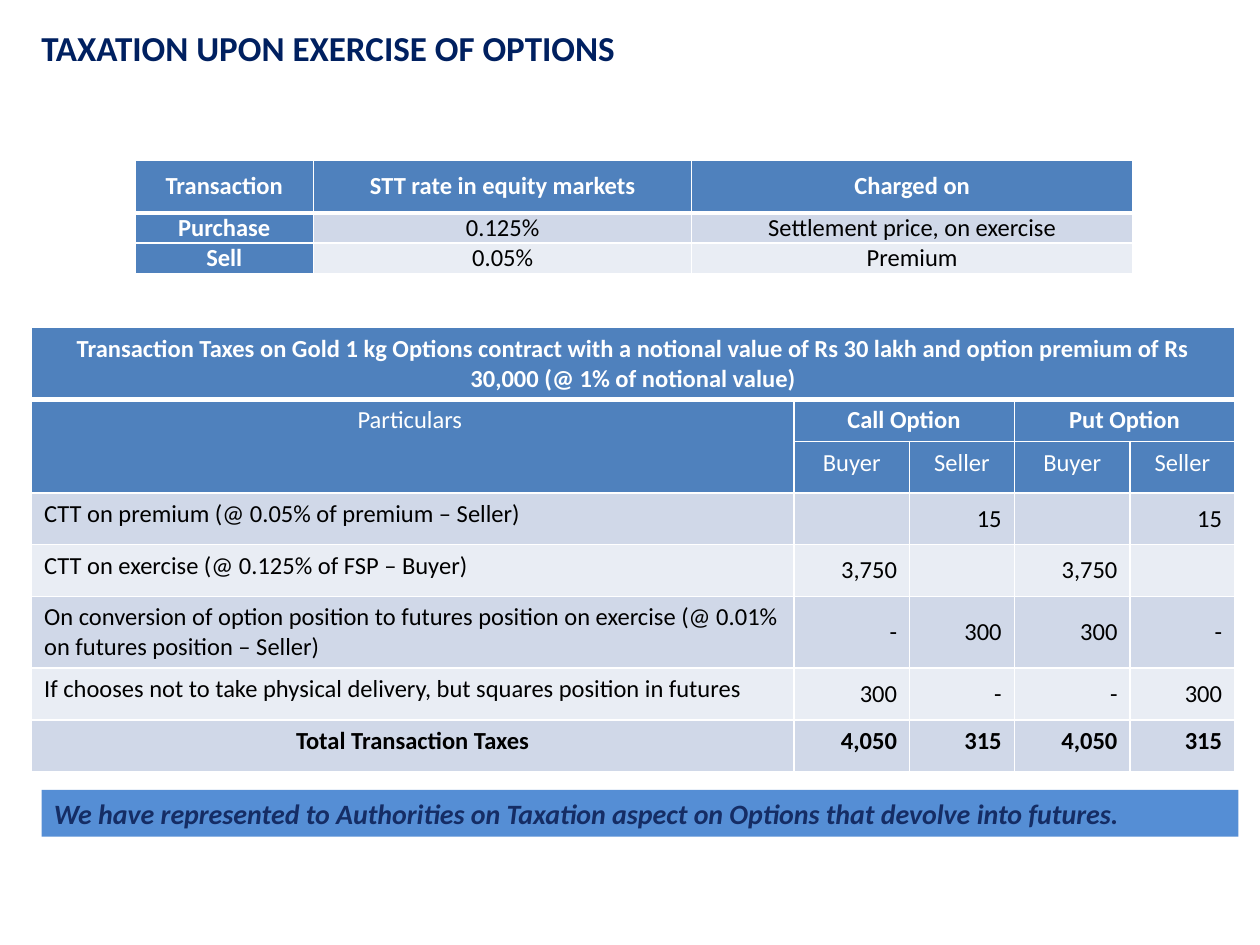
from dataclasses import dataclass
from typing import Optional

from lxml import etree
from pptx import Presentation
from pptx.dml.color import RGBColor
from pptx.enum import shapes, text
from pptx.oxml import ns
from pptx.util import Inches, Pt


@dataclass(frozen=True)
class Theme:
    font: str = "Calibri"
    title: str = "002060"
    header: str = "4F81BD"
    band_dark: str = "D0D8E8"
    band_light: str = "E9EDF4"
    bar: str = "558ED5"
    bar_text: str = "152D65"
    white: str = "FFFFFF"
    black: str = "000000"
    title_size: int = 20
    bar_size: int = 16
    table_size: int = 14
    rule: int = 1
    thick_rule: int = 3


THEME = Theme()
LEFT, CENTER, RIGHT = text.PP_ALIGN.LEFT, text.PP_ALIGN.CENTER, text.PP_ALIGN.RIGHT
TOP, MIDDLE = text.MSO_ANCHOR.TOP, text.MSO_ANCHOR.MIDDLE


@dataclass(frozen=True)
class Style:
    color: str
    fill: Optional[str] = None
    bold: bool = False
    italic: bool = False
    align: text.PP_ALIGN = CENTER
    anchor: text.MSO_ANCHOR = TOP
    size: int = THEME.table_size


@dataclass(frozen=True)
class Grid:
    left: float
    top: float
    columns: list[float]
    rows: list[float]
    values: list[list[str]]
    merges: tuple = ()
    tight: bool = False


def write(frame, content: str, style: Style) -> None:
    frame.text = content
    para = frame.paragraphs[0]
    para.alignment = style.align
    for span in para.runs:
        font = span.font
        font.name, font.size = THEME.font, Pt(style.size)
        font.bold, font.italic = style.bold, style.italic
        font.color.rgb = RGBColor.from_string(style.color)


def add_borders(cell, row: int) -> None:
    """Draw white rules, with a thick one under the first row."""
    properties = cell._tc.get_or_add_tcPr()
    for edge in "LRTB":
        thick = (row, edge) in ((0, "B"), (1, "T"))
        width = THEME.thick_rule if thick else THEME.rule
        line = etree.SubElement(properties, ns.qn(f"a:ln{edge}"), w=str(Pt(width)))
        fill = etree.SubElement(line, ns.qn("a:solidFill"))
        etree.SubElement(fill, ns.qn("a:srgbClr"), val=THEME.white)


def add_grid(page, grid: Grid, style_for) -> None:
    table = page.shapes.add_table(
        len(grid.rows), len(grid.columns), Inches(grid.left), Inches(grid.top),
        Inches(sum(grid.columns)), Inches(sum(grid.rows))).table
    for column, width in zip(table.columns, grid.columns):
        column.width = Inches(width)
    for row, height in zip(table.rows, grid.rows):
        row.height = Inches(height)
    for r, values in enumerate(grid.values):
        for c, value in enumerate(values):
            cell, style = table.cell(r, c), style_for(r, c)
            add_borders(cell, r)
            cell.fill.solid()
            cell.fill.fore_color.rgb = RGBColor.from_string(style.fill)
            cell.vertical_anchor = style.anchor
            if grid.tight:
                cell.margin_left = cell.margin_right = Inches(0.07)
                cell.margin_top = cell.margin_bottom = 0
            write(cell.text_frame, value, style)
    for first, last in grid.merges:
        table.cell(*first).merge(table.cell(*last))


def rate_style(row: int, column: int) -> Style:
    if row == 0 or column == 0:
        return Style(THEME.white, THEME.header, bold=True, anchor=MIDDLE)
    band = THEME.band_dark if row % 2 else THEME.band_light
    return Style(THEME.black, band, anchor=MIDDLE)


def tax_style(row: int, column: int) -> Style:
    if row < 3:
        bold = row == 0 or (row == 1 and column > 0)
        return Style(THEME.white, THEME.header, bold=bold)
    total = row == 7
    band = THEME.band_dark if row % 2 else THEME.band_light
    if column == 0:
        return Style(THEME.black, band, bold=total, align=CENTER if total else LEFT)
    return Style(THEME.black, band, bold=total, align=RIGHT,
                 anchor=TOP if total else MIDDLE)


RATES = Grid(1.07, 1.27, [1.42, 3, 3.5], [0.42, 0.24, 0.24], [
    ["Transaction", "STT rate in equity markets", "Charged on"],
    ["Purchase", "0.125%", "Settlement price, on exercise"],
    ["Sell", "0.05%", "Premium"],
], tight=True)

TAXES = Grid(0.25, 2.6, [6.05] + [0.92, 0.83] * 2,
             [0.57, 0.33, 0.41, 0.41, 0.41, 0.57, 0.41, 0.41], [
    ["Transaction Taxes on Gold 1 kg Options contract with a notional value of "
     "Rs 30 lakh and option premium of Rs 30,000 (@ 1% of notional value)"] + [""] * 4,
    ["Particulars ", "Call Option", "", "Put Option", ""],
    ["", "Buyer", "Seller", "Buyer", "Seller"],
    ["CTT on premium (@ 0.05% of premium – Seller)", "", "15", "", "15"],
    ["CTT on exercise (@ 0.125% of FSP – Buyer)", "3,750", "", "3,750", ""],
    ["On conversion of option position to futures position on exercise "
     "(@ 0.01% on futures position – Seller)", "-", "300", "300", "-"],
    ["If chooses not to take physical delivery, but squares position in futures",
     "300", "-", "-", "300"],
    ["Total Transaction Taxes", "4,050", "315", "4,050", "315"],
], merges=(((0, 0), (0, 4)), ((1, 0), (2, 0)), ((1, 1), (1, 2)), ((1, 3), (1, 4))))


def main() -> None:
    deck = Presentation()
    deck.slide_width, deck.slide_height = Inches(10), Inches(7.5)
    page = deck.slides.add_slide(deck.slide_layouts[6])

    # Title
    title = page.shapes.add_textbox(Inches(0.23), Inches(0.16), Inches(7.24), Inches(0.55))
    title.text_frame.word_wrap = True
    write(title.text_frame, "TAXATION UPON EXERCISE OF OPTIONS",
          Style(THEME.title, bold=True, align=LEFT, size=THEME.title_size))

    # Tables
    add_grid(page, RATES, rate_style)
    add_grid(page, TAXES, tax_style)

    # Closing statement
    bar = page.shapes.add_shape(shapes.MSO_SHAPE.RECTANGLE, Inches(0.33), Inches(6.27),
                                Inches(9.5), Inches(0.37))
    bar.shadow.inherit = False
    bar.fill.solid()
    bar.fill.fore_color.rgb = RGBColor.from_string(THEME.bar)
    bar.line.fill.background()
    bar.text_frame.word_wrap = True
    write(bar.text_frame,
          "We have represented to Authorities on Taxation aspect on Options "
          "that devolve into futures.",
          Style(THEME.bar_text, bold=True, italic=True, align=LEFT, size=THEME.bar_size))

    deck.save("out.pptx")


if __name__ == "__main__":
    main()
